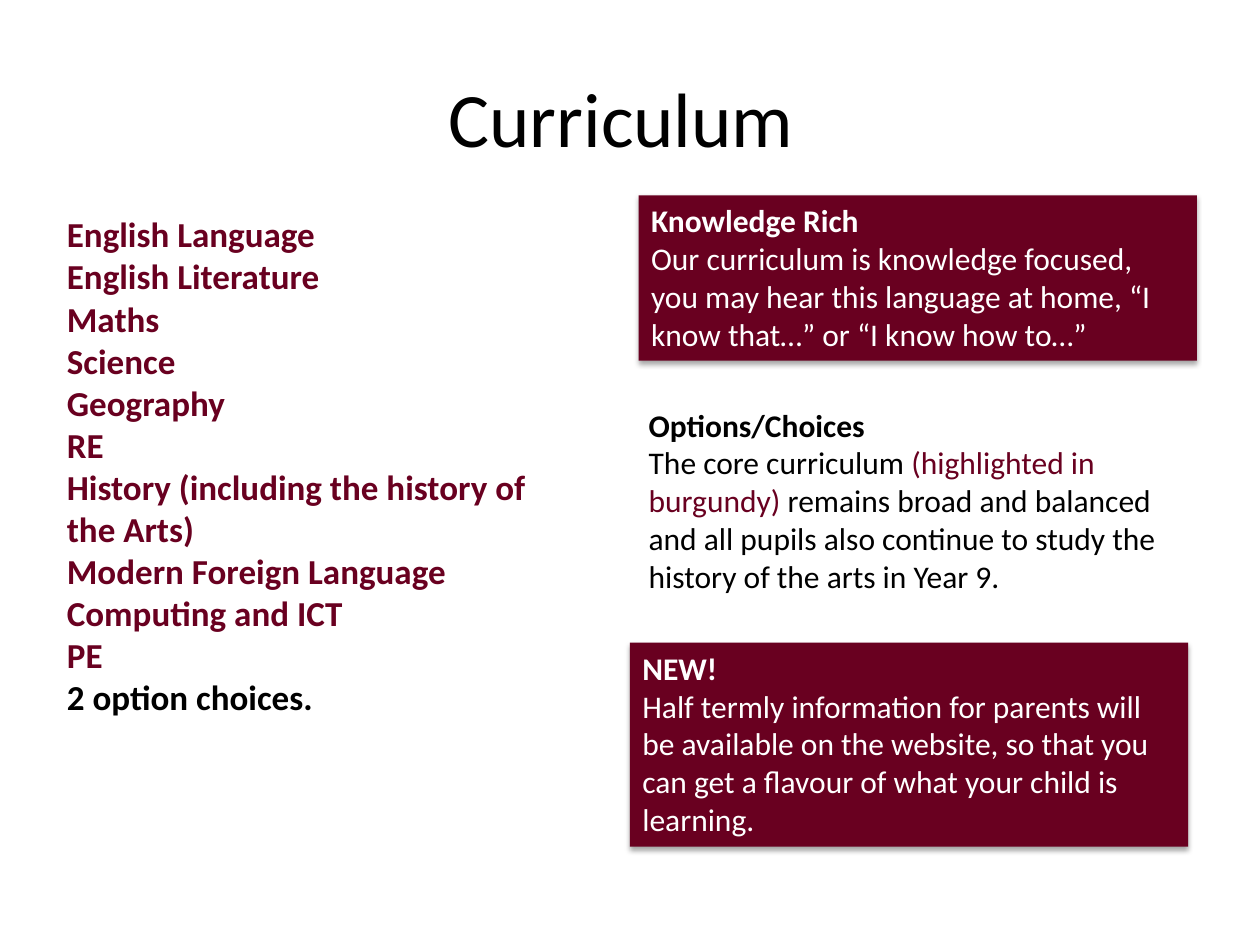
from lxml.etree import SubElement
from pptx import Presentation
from pptx.dml.color import RGBColor
from pptx.enum.shapes import MSO_SHAPE as Shape
from pptx.enum.text import MSO_ANCHOR as Anchor, MSO_AUTO_SIZE as AutoSize, PP_ALIGN as Align
from pptx.oxml.ns import qn
from pptx.util import Pt

COLORS = {"burgundy": "690020", "white": "FFFFFF", "black": "000000"}


def style(font, size, color, bold=False):
    font.name = "Calibri"
    font.size = Pt(size)
    font.bold = bold
    font.color.rgb = RGBColor.from_string(COLORS[color])


def add_shadow(shape):
    effects = shape._element.spPr.find(qn("a:effectLst"))
    outer = SubElement(effects, qn("a:outerShdw"), blurRad=str(Pt(3.1)), dist=str(Pt(1.8)),
                       dir="5400000", rotWithShape="0")
    tint = SubElement(outer, qn("a:srgbClr"), val=COLORS["black"])
    SubElement(tint, qn("a:alpha"), val="35000")


prs = Presentation()
prs.slide_width, prs.slide_height = Pt(720), Pt(540)
slide = prs.slides.add_slide(prs.slide_layouts[1])

heading = slide.shapes.title
heading.left, heading.top, heading.width, heading.height = Pt(36), Pt(21.6), Pt(648), Pt(90)
heading.text_frame.text = "Curriculum "
heading.text_frame.vertical_anchor = Anchor.MIDDLE
heading.text_frame.paragraphs[0].alignment = Align.CENTER
style(heading.text_frame.paragraphs[0].font, 44, "black")

subjects = [
    "English Language",
    "English Literature",
    "Maths",
    "Science",
    "Geography",
    "RE",
    "History (including the history of the Arts)",
    "Modern Foreign Language",
    "Computing and ICT",
    "PE",
    "2 option choices.",
]
subject_list = slide.placeholders[1]
subject_list.left, subject_list.top = Pt(31), Pt(118.1)
subject_list.width, subject_list.height = Pt(293.8), Pt(298)
subject_list.text_frame.text = "\n".join(subjects)
subject_list.text_frame.auto_size = AutoSize.SHAPE_TO_FIT_TEXT
for line in subject_list.text_frame.paragraphs:
    props = line._p.get_or_add_pPr()
    props.set("marL", "0")
    props.set("indent", "0")
    SubElement(props, qn("a:buNone"))
    line.space_before = Pt(0)
    style(line.font, 20, "black" if line.text == subjects[-1] else "burgundy", True)

panels = [
    (365, 111.6, 94.5, "burgundy", "white", "Knowledge Rich", [
        ("Our curriculum is knowledge focused, you may hear this language at home, "
         "“I know that…” or “I know how to…”", "white")]),
    (363.6, 228.2, 116.6, "white", "black", "Options/Choices", [
        ("The core curriculum ", "black"),
        ("(highlighted in burgundy) ", "burgundy"),
        ("remains broad and balanced and all pupils also continue to study "
         "the history of the arts in Year 9.", "black")]),
    (360, 367.2, 116.6, "burgundy", "white", "NEW!", [
        ("Half termly information for parents will be available on the website, "
         "so that you can get a flavour of what your child is learning.", "white")]),
]
for left, top, height, fill, ink, topic, details in panels:
    panel = slide.shapes.add_shape(Shape.RECTANGLE, Pt(left), Pt(top), Pt(319), Pt(height))
    panel.fill.solid()
    panel.fill.fore_color.rgb = RGBColor.from_string(COLORS[fill])
    panel.line.fill.background()
    panel.shadow.inherit = False
    if fill == "burgundy":
        add_shadow(panel)
    frame = panel.text_frame
    frame.word_wrap = True
    frame.auto_size = AutoSize.SHAPE_TO_FIT_TEXT
    frame.vertical_anchor = Anchor.TOP
    topic_line, detail_line = frame.paragraphs[0], frame.add_paragraph()
    topic_line.text = topic
    topic_line.alignment = detail_line.alignment = Align.LEFT
    style(topic_line.font, 18, ink, True)
    style(detail_line.font, 18, ink)
    for words, color in details:
        run = detail_line.add_run()
        run.text = words
        if color != ink:
            run.font.color.rgb = RGBColor.from_string(COLORS[color])

prs.save("out.pptx")
